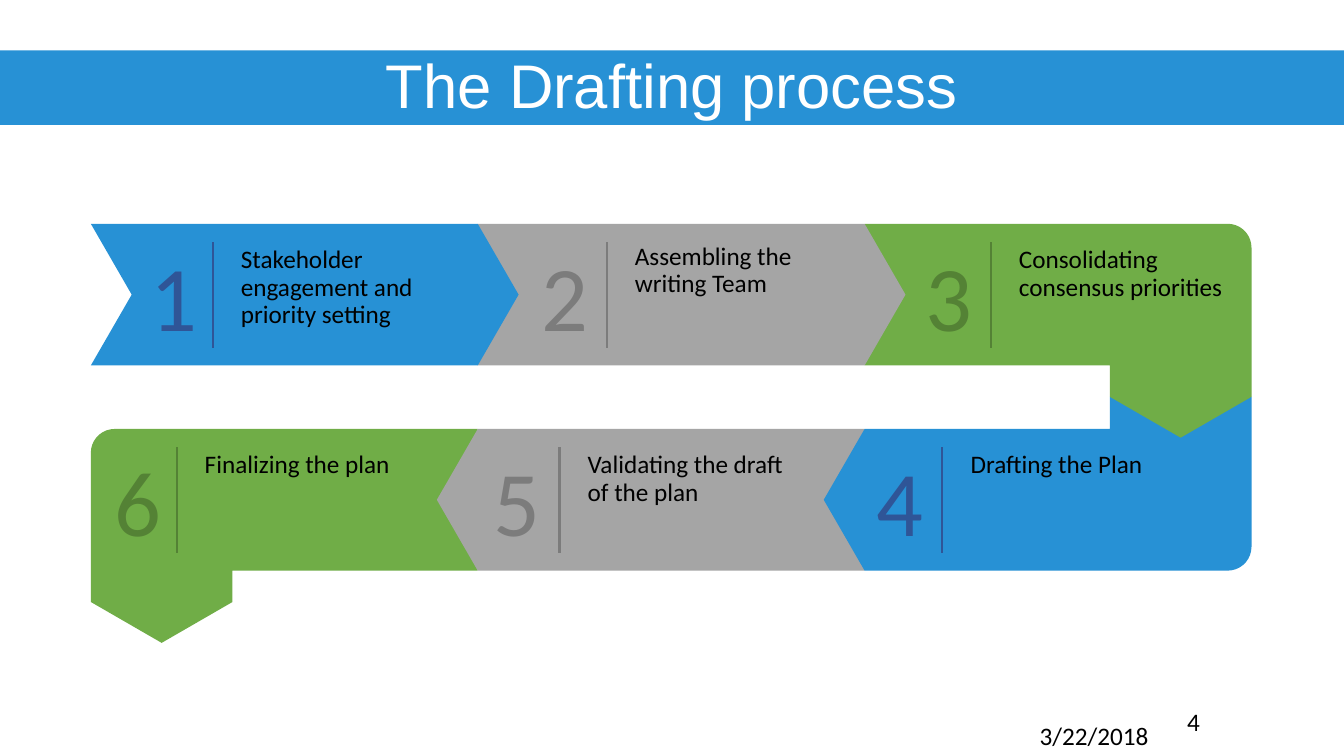
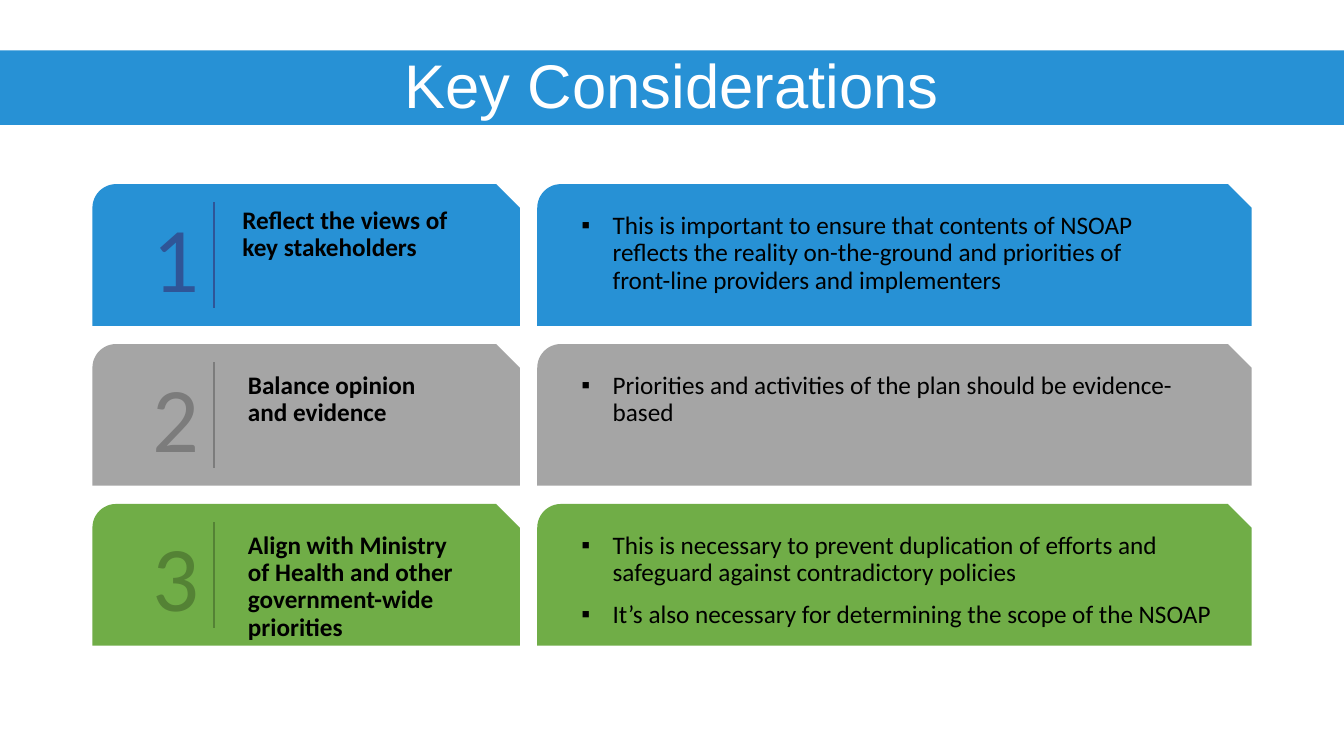
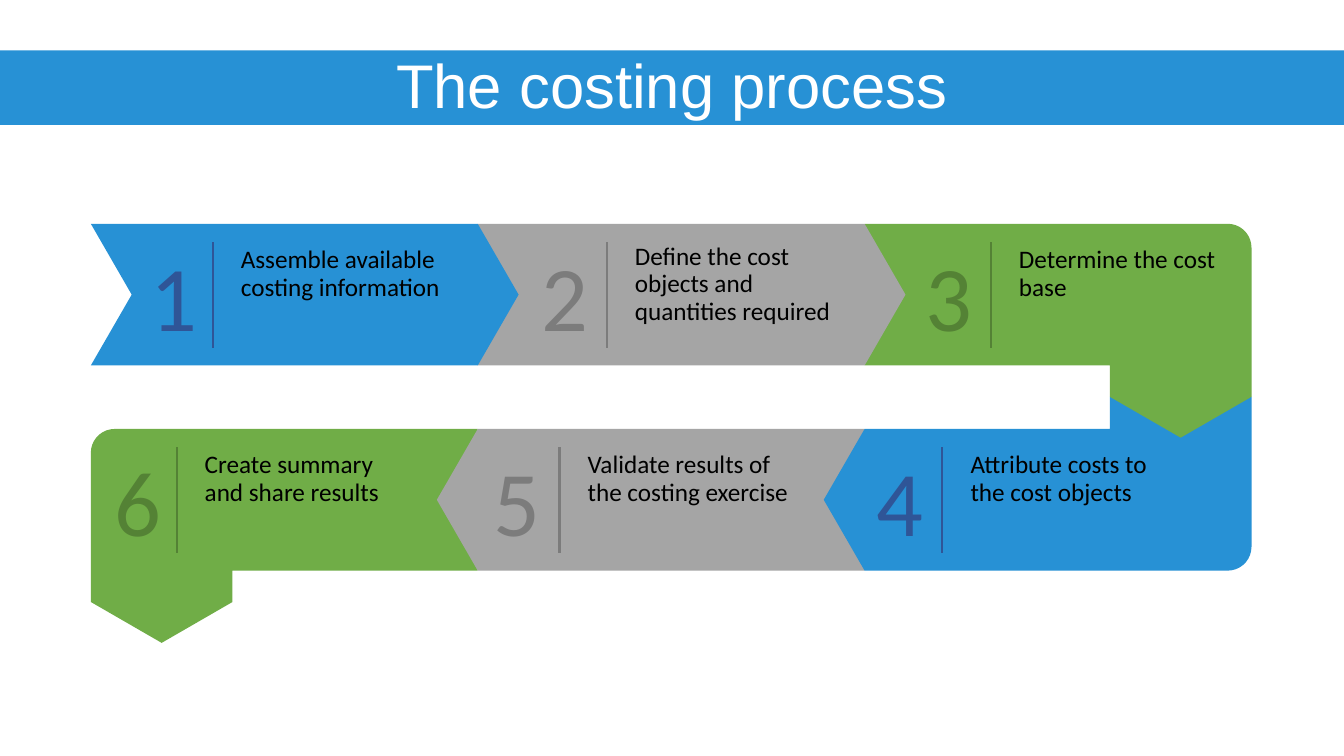
import math
from dataclasses import dataclass

from lxml import etree
from pptx import Presentation
from pptx.dml.color import RGBColor
from pptx.enum import shapes, text
from pptx.oxml.ns import qn
from pptx.util import Cm, Pt

WHITE = RGBColor(0xFF, 0xFF, 0xFF)
BLACK = RGBColor(0x00, 0x00, 0x00)
BLUE = RGBColor(0x27, 0x91, 0xD5)
GREY = RGBColor(0xA5, 0xA5, 0xA5)
GREEN = RGBColor(0x70, 0xAD, 0x47)
DARK = {
    BLUE: RGBColor(0x2F, 0x55, 0x97),
    GREY: RGBColor(0x7C, 0x7C, 0x7C),
    GREEN: RGBColor(0x54, 0x82, 0x35),
}

# All lengths below are in centimetres.
SLIDE_WIDTH, SLIDE_HEIGHT = 33.87, 19.05
LEFT, COLUMN = 2.29, 9.75
EDGES = [LEFT + COLUMN * index for index in range(4)]
UPPER, LOWER = 5.64, 10.81
BAR = 3.57
TIP = 1.03
CORNER = 0.6
SHOULDER = 4.36
CARD_TOP, CARD_PITCH = 4.64, 4.03
CARD_RULE = 5.4

Point = tuple[float, float]


@dataclass(frozen=True)
class Step:
    number: int
    colour: RGBColor
    top: float
    rule: float
    outline: list[Point]
    number_width: float = 2.13
    label_drop: float = 0.46


@dataclass(frozen=True)
class Consideration:
    heading: str
    heading_width: float
    heading_inset: float
    bullets: list[str]
    bullets_width: float
    colour: RGBColor


def rounded(center_x: float, center_y: float, start: int) -> list[Point]:
    """Points of a clockwise quarter circle from the start angle in degrees."""
    angles = [math.radians(start + 10 * index) for index in range(10)]
    return [(center_x + CORNER * math.cos(a), center_y + CORNER * math.sin(a)) for a in angles]


def chevron(left: float) -> list[Point]:
    right, middle, bottom = left + COLUMN, UPPER + BAR / 2, UPPER + BAR
    return [(left, UPPER), (right, UPPER), (right + TIP, middle),
            (right, bottom), (left, bottom)]


def hook(left: float, top: float) -> list[Point]:
    """Down-pointing arrow head below a bar, from its right to its left side."""
    return [(left + BAR, top + SHOULDER), (left + BAR / 2, top + SHOULDER + TIP),
            (left, top + SHOULDER)]


def step_outlines() -> list[list[Point]]:
    right = EDGES[3]
    hook_left = right - BAR
    upper_bottom, lower_bottom = UPPER + BAR, LOWER + BAR
    notch = chevron(EDGES[0]) + [(LEFT + TIP, UPPER + BAR / 2)]
    turn_down = [(EDGES[2], UPPER), *rounded(right - CORNER, UPPER + CORNER, 270),
                 *hook(hook_left, UPPER), (hook_left, upper_bottom), (EDGES[2], upper_bottom)]
    turn_left = [(EDGES[2], LOWER), (hook_left, LOWER), (hook_left, UPPER + SHOULDER),
                 (right, UPPER + SHOULDER), *rounded(right - CORNER, lower_bottom - CORNER, 0),
                 (EDGES[2], lower_bottom), (EDGES[2] - TIP, LOWER + BAR / 2)]
    point_left = [(EDGES[1], LOWER), (EDGES[2], LOWER), (EDGES[2], lower_bottom),
                  (EDGES[1], lower_bottom), (EDGES[1] - TIP, LOWER + BAR / 2)]
    finish = [*rounded(LEFT + CORNER, LOWER + CORNER, 180), (EDGES[1], LOWER),
              (EDGES[1], lower_bottom), (LEFT + BAR, lower_bottom), *hook(LEFT, LOWER)]
    return [notch, chevron(EDGES[1]), turn_down, turn_left, point_left, finish]


OUTLINES = step_outlines()
STEPS = [
    Step(1, BLUE, UPPER, 5.36, OUTLINES[0], number_width=1.93),
    Step(2, GREY, UPPER, 15.29, OUTLINES[1], label_drop=0.38),
    Step(3, GREEN, UPPER, 24.97, OUTLINES[2]),
    Step(4, BLUE, LOWER, 23.75, OUTLINES[3]),
    Step(5, GREY, LOWER, 14.1, OUTLINES[4]),
    Step(6, GREEN, LOWER, 4.45, OUTLINES[5], number_width=1.93),
]

DRAFTING = [
    "Stakeholder engagement and priority setting",
    "Assembling the writing Team",
    "Consolidating consensus priorities",
    "Drafting the Plan",
    "Validating the draft of the plan",
    "Finalizing the plan",
]
COSTING = [
    "Assemble available costing information",
    "Define the cost objects and quantities required",
    "Determine the cost base",
    "Attribute costs to the cost objects",
    "Validate results of the costing exercise",
    "Create summary and share results",
]
CONSIDERATIONS = [
    Consideration(
        "Reflect the views of key stakeholders", 5.84, 0,
        ["This is important to ensure that contents of NSOAP reflects the reality "
         "on-the-ground and priorities of front-line providers and implementers"],
        15.3, BLUE),
    Consideration(
        "Balance opinion and evidence", 5.4, 0.14,
        ["Priorities and activities of the plan should be evidence-based"],
        16.1, GREY),
    Consideration(
        "Align with Ministry of Health and other government-wide priorities", 5.9, 0.14,
        ["This is necessary to prevent duplication of efforts and safeguard against "
         "contradictory policies",
         "It’s also necessary for determining the scope of the NSOAP"],
        16.5, GREEN),
]


def paint(shape, colour: RGBColor) -> None:
    shape.fill.solid()
    shape.fill.fore_color.rgb = colour
    shape.line.fill.background()
    shape.shadow.inherit = False


def format_runs(paragraph, size: float, colour: RGBColor = BLACK,
                name: str = "Calibri", bold: bool = False) -> None:
    for run in paragraph.runs:
        run.font.size = Pt(size)
        run.font.name = name
        run.font.bold = bold
        run.font.color.rgb = colour


def add_text(slide, lines: list[str], left: float, top: float, width: float,
             height: float = 2.66, bold: bool = False, line_spacing: float = 0.9):
    box = slide.shapes.add_textbox(Cm(left), Cm(top), Cm(width), Cm(height))
    frame = box.text_frame
    frame.word_wrap = True
    frame.text = "\n".join(lines)
    for paragraph in frame.paragraphs:
        paragraph.line_spacing = line_spacing
        format_runs(paragraph, 18, bold=bold)
    return box


def add_bullets(slide, lines: list[str], left: float, top: float, width: float) -> None:
    box = add_text(slide, lines, left, top, width)
    for index, paragraph in enumerate(box.text_frame.paragraphs):
        if index:
            paragraph.space_before = Pt(10)
        properties = paragraph._p.get_or_add_pPr()
        properties.set("marL", str(Cm(0.79)))
        properties.set("indent", str(-Cm(0.79)))
        etree.SubElement(properties, qn("a:buFont")).set("typeface", "Arial")
        etree.SubElement(properties, qn("a:buChar")).set("char", "▪")


def add_marker(slide, number: int, colour: RGBColor, rule: float, top: float,
               width: float) -> None:
    """Large number with a vertical rule on its right, in a bar starting at top."""
    box = slide.shapes.add_textbox(Cm(rule - width), Cm(top + 0.38), Cm(width), Cm(2.82))
    frame = box.text_frame
    frame.word_wrap = True
    frame.auto_size = text.MSO_AUTO_SIZE.SHAPE_TO_FIT_TEXT
    frame.vertical_anchor = text.MSO_ANCHOR.MIDDLE
    frame.margin_left = frame.margin_right = frame.margin_top = frame.margin_bottom = 0
    frame.text = str(number)
    frame.paragraphs[0].alignment = text.PP_ALIGN.CENTER
    format_runs(frame.paragraphs[0], 66, DARK[colour])

    line = slide.shapes.add_connector(shapes.MSO_CONNECTOR.STRAIGHT, Cm(rule), Cm(top + 0.46),
                                      Cm(rule), Cm(top + 3.12))
    line.line.color.rgb = DARK[colour]
    line.line.width = Pt(1.5)
    etree.SubElement(line.element.spPr, qn("a:effectLst"))


def add_title_band(slide, layout) -> None:
    """Draw the band and move it to the layout, behind every slide's title."""
    band = slide.shapes.add_shape(shapes.MSO_SHAPE.RECTANGLE, 0, Cm(1.27),
                                  Cm(SLIDE_WIDTH), Cm(1.88))
    paint(band, BLUE)
    layout.shapes.element.insert(2, band.element)


def add_titled_slide(presentation, layout, heading: str):
    slide = presentation.slides.add_slide(layout)
    title = slide.shapes.title
    title.left, title.top, title.width, title.height = Cm(2.33), Cm(1.01), Cm(29.21), Cm(2.43)
    frame = title.text_frame
    frame.text = heading
    frame.auto_size = text.MSO_AUTO_SIZE.NONE
    frame.vertical_anchor = text.MSO_ANCHOR.MIDDLE
    paragraph = frame.paragraphs[0]
    paragraph.alignment = text.PP_ALIGN.CENTER
    paragraph.line_spacing = 0.9
    format_runs(paragraph, 44, WHITE, "Arial")
    return slide


def add_process(slide, labels: list[str]) -> None:
    for step in reversed(STEPS):
        points = [(Cm(x), Cm(y)) for x, y in step.outline]
        builder = slide.shapes.build_freeform(*points[0])
        builder.add_line_segments(points[1:], close=True)
        paint(builder.convert_to_shape(), step.colour)
    for step, label in zip(STEPS, labels):
        add_marker(slide, step.number, step.colour, step.rule, step.top, step.number_width)
        add_text(slide, [label], step.rule + 0.46, step.top + step.label_drop, 5.84)


def add_considerations(slide) -> None:
    for index, item in enumerate(CONSIDERATIONS):
        top = CARD_TOP + CARD_PITCH * index
        for left, width in ((2.33, 10.77), (13.54, 18)):
            card = slide.shapes.add_shape(shapes.MSO_SHAPE.SNIP_ROUND_RECTANGLE, Cm(left),
                                          Cm(top), Cm(width), Cm(BAR))
            paint(card, item.colour)
        add_marker(slide, index + 1, item.colour, CARD_RULE, top, 1.93)
        add_text(slide, [item.heading], CARD_RULE + 0.46 + item.heading_inset,
                 top + 0.46 + item.heading_inset, item.heading_width, bold=True)
        add_bullets(slide, item.bullets, 14.4, top + 0.6, item.bullets_width)


def main() -> None:
    presentation = Presentation()
    presentation.slide_width, presentation.slide_height = Cm(SLIDE_WIDTH), Cm(SLIDE_HEIGHT)
    layout = presentation.slide_layouts.get_by_name("Title Only")

    drafting = add_titled_slide(presentation, layout, "The Drafting process")
    add_title_band(drafting, layout)
    add_process(drafting, DRAFTING)
    add_text(drafting, ["3/22/2018"], 25.95, 18.03, 3.73, 1.02, line_spacing=1)
    add_text(drafting, ["4"], 29.67, 17.68, 2.95, 1.37, line_spacing=1)

    add_considerations(add_titled_slide(presentation, layout, "Key Considerations"))
    add_process(add_titled_slide(presentation, layout, "The costing process"), COSTING)
    presentation.save("out.pptx")


if __name__ == "__main__":
    main()
